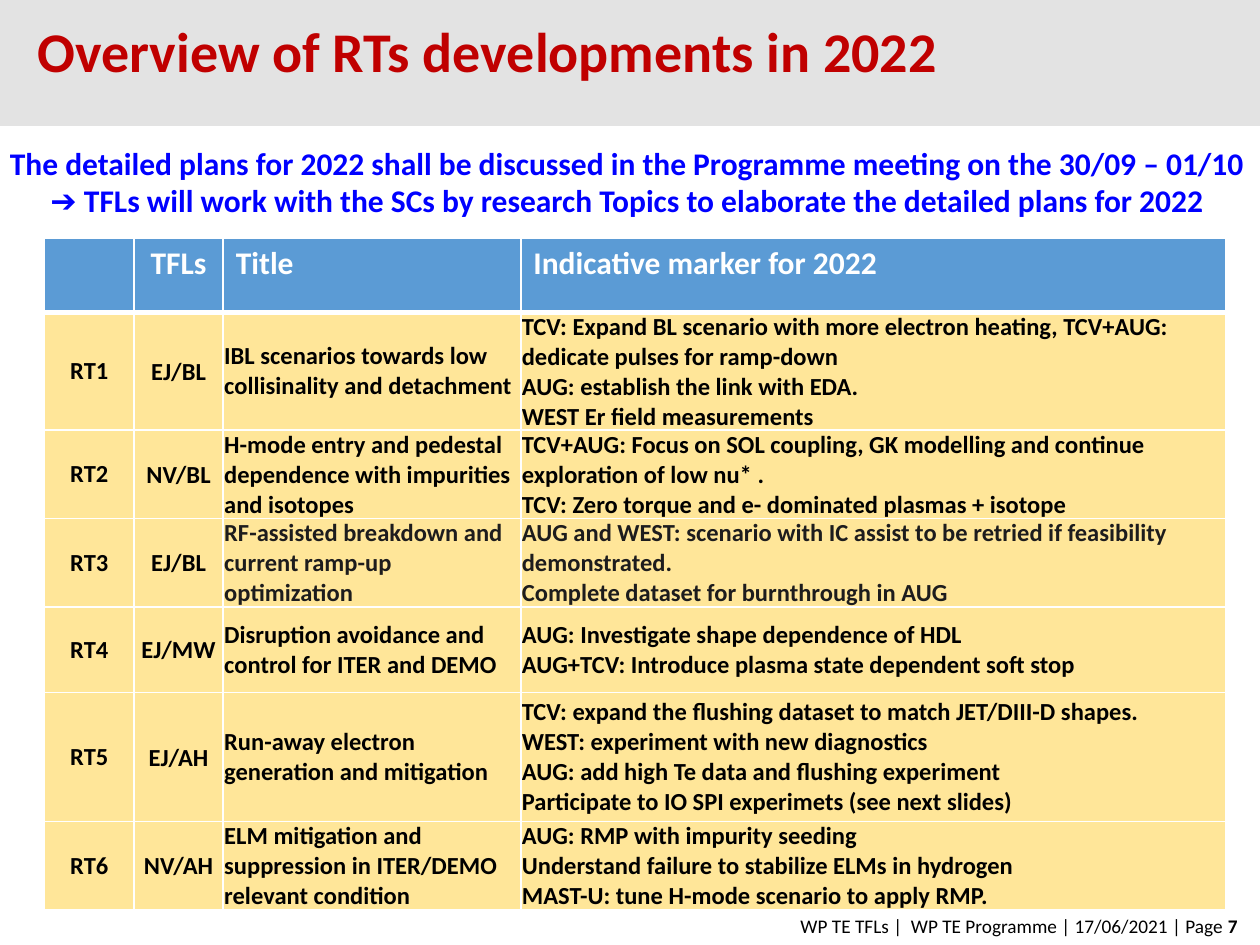
from lxml import etree
from pptx import Presentation
from pptx.dml.color import RGBColor
from pptx.enum.shapes import MSO_SHAPE
from pptx.enum.text import MSO_ANCHOR, MSO_AUTO_SIZE, PP_ALIGN
from pptx.oxml.ns import qn
from pptx.util import Cm, Pt

RECT = MSO_SHAPE.RECTANGLE
MID, TOP = MSO_ANCHOR.MIDDLE, MSO_ANCHOR.TOP
LEFT, CENTER, RIGHT = PP_ALIGN.LEFT, PP_ALIGN.CENTER, PP_ALIGN.RIGHT
NOFIT = MSO_AUTO_SIZE.NONE

THEME = {
    "font": "Calibri",
    "band": "E3E3E3", "title": "C00000", "note": "0000FF",
    "head": "5B9BD5", "body": "FFE699", "line": "FFFFFF",
    "white": "FFFFFF", "ink": "000000", "soft": "1D1C1D",
    "big": 32, "mid": 18, "small": 14, "tiny": 11,
}

TITLE = "Overview of RTs developments in 2022"
NOTES = [
    "The detailed plans for 2022 shall be discussed in the Programme meeting on the 30/09 – 01/10",
    "➔ TFLs will work with the SCs by research Topics to elaborate the detailed plans for 2022",
]
FOOTER = "WP TE TFLs |  WP TE Programme | 17/06/2021 | Page "
PAGE = "7"
HEADS = ["", "TFLs", "Title", "Indicative marker for 2022"]
TOPICS = [
    ("RT1", "EJ/BL", "IBL scenarios towards low collisinality and detachment", [
        "TCV: Expand BL scenario with more electron heating, TCV+AUG: dedicate pulses for ramp-down",
        "AUG: establish the link with EDA.",
        "WEST Er field measurements"]),
    ("RT2", "NV/BL", "H-mode entry and pedestal dependence with impurities and isotopes", [
        "TCV+AUG: Focus on SOL coupling, GK modelling and continue exploration of low nu* .",
        "TCV: Zero torque and e- dominated plasmas + isotope"]),
    ("RT3", "EJ/BL", "RF-assisted breakdown and current ramp-up optimization", [
        "AUG and WEST: scenario with IC assist to be retried if feasibility demonstrated.",
        "Complete dataset for burnthrough in AUG"]),
    ("RT4", "EJ/MW", "Disruption avoidance and control for ITER and DEMO", [
        "AUG: Investigate shape dependence of HDL",
        "AUG+TCV: Introduce plasma state dependent soft stop"]),
    ("RT5", "EJ/AH", "Run-away electron generation and mitigation", [
        "TCV: expand the flushing dataset to match JET/DIII-D shapes.",
        "WEST: experiment with new diagnostics",
        "AUG: add high Te data and flushing experiment",
        "Participate to IO SPI experimets (see next slides)"]),
    ("RT6", "NV/AH", "ELM mitigation and suppression in ITER/DEMO relevant condition", [
        "AUG: RMP with impurity seeding",
        "Understand failure to stabilize ELMs in hydrogen",
        "MAST-U: tune H-mode scenario to apply RMP."]),
]
SOFT = "RT3"
COLS = [1.8, 1.8, 6, 14.2]
ROWS = [1.5, 2.1, 1.73, 1.73, 1.73, 2.6, 1.73]
ALIGNS = [CENTER, CENTER, LEFT, LEFT]
PADS = [(0.25, 0), (0.02, 0.02), (0.02, 0), (0.02, 0)]


def color(name):
    return RGBColor.from_string(THEME[name])


def add_run(para, text, size, ink, bold=True):
    run = para.add_run()
    run.text = text
    font = run.font
    font.name, font.size, font.bold = THEME["font"], Pt(THEME[size]), bold
    font.color.rgb = color(ink)


def write(frame, lines, size, ink, align):
    for i, line in enumerate(lines):
        para = frame.add_paragraph() if i else frame.paragraphs[0]
        para.alignment = align
        para.font.size = Pt(THEME[size])
        if line:
            add_run(para, line, size, ink)


def add_box(slide, *place):
    frame = slide.shapes.add_textbox(*map(Cm, place)).text_frame
    frame.word_wrap = True
    return frame


def set_lines(cell, top, base):
    props = cell._tc.get_or_add_tcPr()
    for i, (side, wide) in enumerate([("L", 1), ("R", 1), ("T", top), ("B", base)]):
        line = etree.Element(qn("a:ln" + side), w=str(Pt(wide)))
        fill = etree.SubElement(line, qn("a:solidFill"))
        etree.SubElement(fill, qn("a:srgbClr"), val=THEME["line"])
        props.insert(i, line)


def fill_cell(cell, row, col, item):
    head = row == 0
    cell.fill.solid()
    cell.fill.fore_color.rgb = color("head" if head else "body")
    set_lines(cell, 3 if row == 1 else 1, 3 if head else 1)
    cell.vertical_anchor = TOP if head else MID
    if not head:
        side, top = PADS[col]
        cell.margin_left = cell.margin_right = Cm(side)
        cell.margin_top, cell.margin_bottom = Cm(top), 0
    soft = col > 1 and TOPICS[row - 1][0] == SOFT
    ink = "white" if head else "soft" if soft else "ink"
    lines = item if isinstance(item, list) else [item]
    write(cell.text_frame, lines, "mid" if head else "small", ink, ALIGNS[col])


def add_grid(slide):
    data = [HEADS, *TOPICS]
    grid = slide.shapes.add_table(
        len(ROWS), len(COLS), Cm(0.9), Cm(4.8), Cm(sum(COLS)), Cm(sum(ROWS))).table
    for col, wide in zip(grid.columns, COLS):
        col.width = Cm(wide)
    for row, high in zip(grid.rows, ROWS):
        row.height = Cm(high)
    for r, items in enumerate(data):
        for c, item in enumerate(items):
            fill_cell(grid.cell(r, c), r, c, item)


def add_title(slide):
    band = slide.shapes.add_shape(RECT, 0, 0, Cm(25.4), Cm(2.54))
    band.shadow.inherit = False
    band.fill.solid()
    band.fill.fore_color.rgb = color("band")
    band.line.fill.background()
    slide.shapes._spTree.insert(2, band._element)
    title = slide.shapes.title
    title.left, title.top, title.width, title.height = map(Cm, (0.5, 0, 21.72, 2.54))
    frame = title.text_frame
    frame.auto_size = NOFIT
    frame.vertical_anchor = MID
    write(frame, [TITLE], "big", "title", LEFT)
    frame.paragraphs[0].line_spacing = Pt(24)


def main():
    deck = Presentation()
    deck.slide_width, deck.slide_height = Cm(25.4), Cm(19.05)
    slide = deck.slides.add_slide(deck.slide_layouts[5])
    add_title(slide)
    foot = add_box(slide, 2.3, 18.31, 22.9, 0.74).paragraphs[0]
    foot.alignment = RIGHT
    add_run(foot, FOOTER, "tiny", "ink", False)
    add_run(foot, PAGE, "tiny", "ink")
    add_grid(slide)
    write(add_box(slide, -0.1, 2.77, 25.5, 1.8), NOTES, "mid", "note", CENTER)
    deck.save("out.pptx")


if __name__ == "__main__":
    main()
